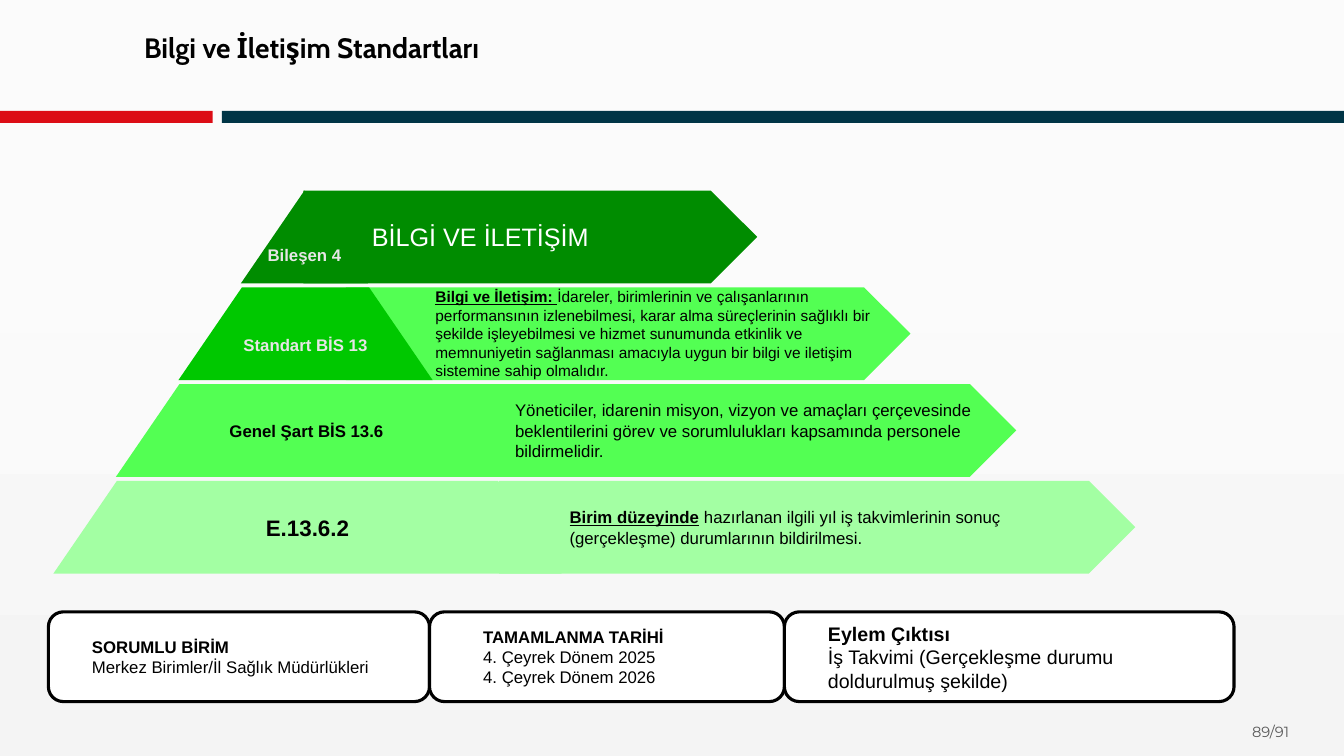
from copy import deepcopy

from pptx import Presentation
from pptx import util as u
from pptx.dml.color import RGBColor
from pptx.enum import shapes, text

COLORS = {
    "black": "000000", "white": "FFFFFF", "grey": "595959", "pale": "E7E6E6",
    "red": "DC0C15", "navy": "003546", "forest": "008C00", "green": "00C800",
    "lime": "53FF53", "mint": "A3FFA3",
}
BACKGROUND = ("FBFBFB", "FAFAFA", "F4F4F4")
TIER_TOP, TIER_PITCH, TIER_HEIGHT = 1.89, 0.96, 0.92
TIER_LEFT, TIER_STEP, TIER_WIDTH, SLANT = 2.39, 0.62, 1.26, 0.63

ARROWS = [
    (3.01, 4.5, "forest", 0.58, 18, "white", [("BİLGİ VE İLETİŞİM", "")]),
    (3.43, 5.6, "lime", 0.79, 11, "black", [
        ("Bilgi ve İletişim: ", "bu"),
        ("İdareler, birimlerinin ve çalışanlarının performansının izlenebilmesi, "
         "karar alma süreçlerinin sağlıklı bir şekilde işleyebilmesi ve hizmet "
         "sunumunda etkinlik ve memnuniyetin sağlanması amacıyla uygun bir bilgi "
         "ve iletişim sistemine sahip olmalıdır.", "")]),
    (4.22, 5.86, "lime", 0.79, 12, "black", [
        ("Yöneticiler, idarenin misyon, vizyon ve amaçları çerçevesinde "
         "beklentilerini görev ve sorumlulukları kapsamında personele "
         "bildirmelidir.", "")]),
    (4.95, 6.31, "mint", 0.6, 12, "black", [
        ("Birim düzeyinde", "bu"),
        (" hazırlanan ilgili yıl iş takvimlerinin sonuç (gerçekleşme) "
         "durumlarının bildirilmesi.", "")]),
]
LABELS = [
    ("Bileşen 4", "forest", "pale", 12, 0.39),
    ("Standart BİS 13", "green", "pale", 12, 0.25),
    ("Genel Şart BİS 13.6", "lime", "black", 12, 0.03),
    ("E.13.6.2", "mint", "black", 16, 0.03),
]
CARDS = [
    (0.48, 3.78, 0.29, 12, ["SORUMLU BİRİM", "Merkez Birimler/İl Sağlık Müdürlükleri"]),
    (4.26, 3.52, 0.39, 12,
     ["TAMAMLANMA TARİHİ", "4. Çeyrek Dönem 2025", "4. Çeyrek Dönem 2026"]),
    (7.78, 4.46, 0.29, 14,
     ["Eylem Çıktısı", "İş Takvimi (Gerçekleşme durumu doldurulmuş şekilde)"]),
]


def rgb(name):
    """Return the named colour."""
    return RGBColor.from_string(COLORS[name])


def paint(shape, fill):
    """Give a shape a plain fill without line or shadow."""
    shape.shadow.inherit = False
    shape.fill.solid()
    shape.fill.fore_color.rgb = rgb(fill)
    shape.line.fill.background()


def write(shape, paragraphs, size, color, font="Arial", indent=0,
          align=text.PP_ALIGN.LEFT, anchor=text.MSO_ANCHOR.MIDDLE):
    """Fill a shape with paragraphs made of (words, style) runs."""
    frame = shape.text_frame
    frame.word_wrap = True
    frame.vertical_anchor = anchor
    for number, pieces in enumerate(paragraphs):
        paragraph = frame.paragraphs[0] if number == 0 else frame.add_paragraph()
        paragraph.alignment = align
        properties = paragraph._p.get_or_add_pPr()
        properties.set("marL", str(u.Inches(indent)))
        properties.set("indent", "0")
        for words, style in pieces:
            run = paragraph.add_run()
            run.text = words
            run.font.name = font
            run.font.size = u.Pt(size)
            run.font.color.rgb = rgb(color)
            run.font.bold = "b" in style
            run.font.underline = "u" in style


def add_preset(slide, kind, left, top, width, height, fill):
    """Add a painted preset shape."""
    shape = slide.shapes.add_shape(kind, *map(u.Inches, (left, top, width, height)))
    paint(shape, fill)
    return shape


def add_caption(slide, left, top, width, height, words, size, color, font, style=""):
    """Add a single-line text box."""
    caption = slide.shapes.add_textbox(*map(u.Inches, (left, top, width, height)))
    write(caption, [[(words, style)]], size, color, font, anchor=text.MSO_ANCHOR.TOP)
    return caption


def add_arrow(slide, tier, left, width, fill, indent, size, color, pieces):
    """Add the explanation arrow of a pyramid tier."""
    arrow = add_preset(slide, shapes.MSO_SHAPE.PENTAGON, left,
                       TIER_TOP + tier * TIER_PITCH, width, TIER_HEIGHT, fill)
    write(arrow, [pieces], size, color, indent=indent)


def add_tier(slide, tier, words, fill, color, size, inset_top):
    """Add the labelled slice of the pyramid at a tier."""
    left = TIER_LEFT - tier * TIER_STEP
    right = left + TIER_WIDTH * (tier + 1)
    top = TIER_TOP + tier * TIER_PITCH
    bottom = top + TIER_HEIGHT
    corners = [(left, bottom), (left + SLANT, top), (right - SLANT, top), (right, bottom)]
    points = [(u.Inches(x), u.Inches(y)) for x, y in corners]
    outline = slide.shapes.build_freeform(*points[0])
    outline.add_line_segments(points[1:], close=True)
    slab = outline.convert_to_shape()
    paint(slab, fill)
    frame = slab.text_frame
    frame.margin_left = frame.margin_right = u.Inches(0.26 * tier)
    frame.margin_top, frame.margin_bottom = u.Inches(inset_top), u.Inches(0.03)
    write(slab, [[(words, "b")]], size, color, align=text.PP_ALIGN.CENTER)


def add_card(slide, left, width, indent, size, lines):
    """Add an outlined card with a bold heading."""
    card = add_preset(slide, shapes.MSO_SHAPE.ROUNDED_RECTANGLE,
                      left, 6.07, width, 0.89, "white")
    card.line.color.rgb = rgb("black")
    card.line.width = u.Pt(2.25)
    heading, *details = lines
    write(card, [[(heading, "b")]] + [[(line, "")] for line in details],
          size, "black", indent=indent)


def set_background(slide):
    """Shade the slide from top to bottom."""
    fill = slide.background.fill
    fill.gradient()
    fill.gradient_angle = 270
    first = fill.gradient_stops[0]._gs
    first.addnext(deepcopy(first))
    for stop, position, shade in zip(fill.gradient_stops, (0, 0.44, 1), BACKGROUND):
        stop.position = position
        stop.color.rgb = RGBColor.from_string(shade)


def main():
    """Build and save the slide."""
    deck = Presentation()
    deck.slide_width, deck.slide_height = u.Inches(13.33), u.Inches(7.5)
    slide = deck.slides.add_slide(deck.slide_layouts[6])
    set_background(slide)
    add_caption(slide, 12.32, 7.12, 0.9, 0.4, "89/91", 10.5, "grey", "Montserrat")
    for left, width, fill in ((0, 2.11, "red"), (2.2, 11.13, "navy")):
        add_preset(slide, shapes.MSO_SHAPE.RECTANGLE, left, 1.1, width, 0.12, fill)
    title = add_caption(slide, 1.33, 0.29, 4.41, 0.49, "Bilgi ve İletişim Standartları",
                        20, "black", "Cabin", "b")
    title.text_frame.paragraphs[0].line_spacing = 0.9
    for tier, arrow in enumerate(ARROWS):
        add_arrow(slide, tier, *arrow)
    for tier, label in enumerate(LABELS):
        add_tier(slide, tier, *label)
    for card in CARDS:
        add_card(slide, *card)
    deck.save("out.pptx")


if __name__ == "__main__":
    main()
